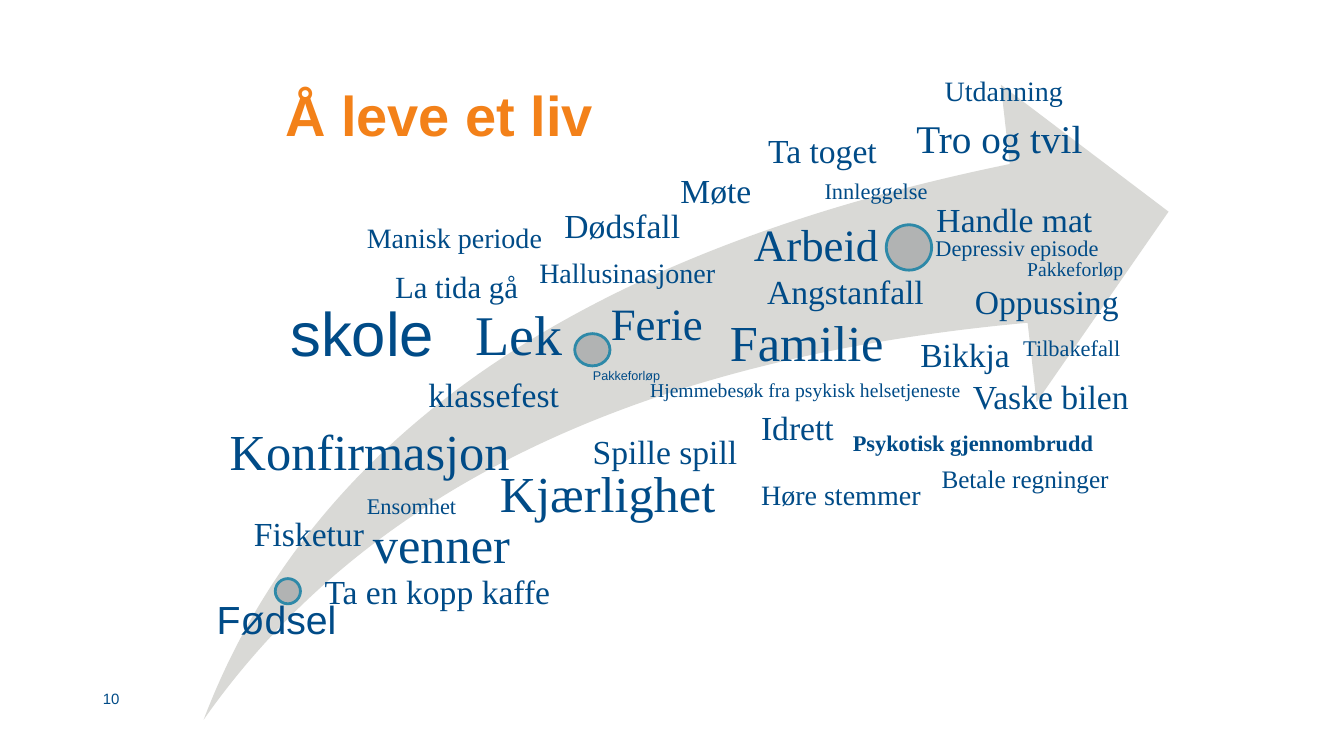
from pptx import Presentation
from pptx import util as u
from pptx.dml.color import RGBColor
from pptx.enum import shapes, text

BLUE, ORANGE = "004B87", "F38119"
SANS, SERIF = "Arial", "Times New Roman"

presentation = Presentation()
presentation.slide_width = u.Inches(13.33)
presentation.slide_height = u.Inches(7.5)
slide = presentation.slides.add_slide(presentation.slide_layouts[6])

# Square grid: 133.3 columns by 75 rows
CELL = presentation.slide_height / 75


def cells(*counts):
    """Turn counts of grid cells into slide lengths."""
    return [u.Emu(round(count * CELL)) for count in counts]


def write(words, box, size, font, color=BLUE, bold=False, insets=(1, 0.5, 1, 0.5),
          spacing=1.0, anchor=text.MSO_ANCHOR.TOP):
    """Add one line of text; box and insets are counted in grid cells."""
    frame = slide.shapes.add_textbox(*cells(*box)).text_frame
    frame.word_wrap = True
    frame.vertical_anchor = anchor
    (frame.margin_left, frame.margin_top,
     frame.margin_right, frame.margin_bottom) = cells(*insets)
    paragraph = frame.paragraphs[0]
    paragraph.line_spacing = spacing
    run = paragraph.add_run()
    run.text = words
    run.font.name = font
    run.font.size = u.Pt(size)
    run.font.bold = bold
    run.font.color.rgb = RGBColor.from_string(color)


write("10", (8.9, 67.7, 11.1, 3.3), 10.7, SANS, insets=(1.3, 0.7, 1.3, 0.7))
write("Å leve et liv", (27.3, 4.7, 78.3, 13.3), 40, SANS, ORANGE, bold=True,
      anchor=text.MSO_ANCHOR.MIDDLE)

# Life arrow, then the milestones along it
OVAL = shapes.MSO_SHAPE.OVAL
figures = [
    (shapes.MSO_SHAPE.SWOOSH_ARROW, (20.2, 8.4, 95.7, 63), "D9D9D6"),
    (OVAL, (27.3, 57.4, 2.5, 2.5), "B1B3B3"),
    (OVAL, (87.9, 22.3, 4.5, 4.5), "B1B3B3"),
    (OVAL, (57, 33.1, 3.5, 3.2), "B1B3B3"),
]
for kind, box, fill in figures:
    shape = slide.shapes.add_shape(kind, *cells(*box))
    shape.shadow.inherit = False
    shape.fill.solid()
    shape.fill.fore_color.rgb = RGBColor.from_string(fill)
    if kind == OVAL:
        shape.line.color.rgb = RGBColor.from_string("2E89A8")
        shape.line.width = u.Pt(2)
    else:
        shape.adjustments[0] = shape.adjustments[1] = 0.25
        shape.line.fill.background()

# Milestone labels: words, box, size, left inset
milestones = [
    ("Fødsel", (20.2, 59.6, 22.3, 4.7), 28, 1.3),
    ("Pakkeforløp", (56.4, 36.7, 9.5, 2.9), 9, 2.4),
    ("skole", (25.5, 30.1, 17.6, 7.3), 44, 3.3),
]
for words, box, size, inset in milestones:
    write(words, box, size, SANS, insets=(inset, 0, 0, 0), spacing=0.9)

# Word cloud by size: words, left, top, width
cloud = {
    40: [("Lek", 46.2, 29.2, 12.6)],
    36: [("Kjærlighet", 48.6, 45.4, 28.4), ("venner", 36, 50.4, 18.1),
         ("Konfirmasjon", 21.8, 41.2, 33.2), ("Familie", 71.4, 30.4, 22)],
    32: [("Ferie", 59.6, 28.8, 14.2), ("Arbeid", 73.8, 21, 17.3)],
    28: [("Tro og tvil", 89.9, 10.8, 21.7)],
    24: [("Idrett", 74.5, 39.9, 22.8), ("Bikkja", 90.3, 32.6, 13.4),
         ("Handle mat", 91.9, 19.2, 19.7), ("Dødsfall", 55, 19.8, 15),
         ("Ta toget", 75.2, 12.4, 17.3), ("Fisketur", 24.2, 50.4, 15.7),
         ("klassefest", 41.5, 36.6, 16.5), ("Oppussing", 95.7, 27.4, 17),
         ("Møte", 66.5, 16.4, 10.5), ("Vaske bilen", 95.5, 36.8, 18.9),
         ("Spille spill", 57.8, 42.3, 19.7), ("Ta en kopp kaffe", 31.2, 56.1, 29.9),
         ("Angstanfall", 75.1, 26.4, 17.6)],
    22: [("La tida gå", 38.2, 26.1, 15.6)],
    20: [("Høre stemmer", 74.5, 46.9, 26), ("Utdanning", 92.7, 6.8, 22),
         ("Manisk periode", 35.4, 21.4, 21.6), ("Hallusinasjoner", 52.5, 24.9, 20.8)],
    18: [("Betale regninger", 92.4, 45.5, 24.3)],
    16: [("Psykotisk gjennombrudd", 83.6, 42.1, 26.8), ("Depressiv episode", 91.8, 22.7, 19.7),
         ("Tilbakefall", 100.5, 32.7, 14.2), ("Innleggelse", 80.8, 17.1, 13.5),
         ("Ensomhet", 35.4, 48.3, 13.2)],
    14: [("Pakkeforløp", 100.9, 25, 15),
         ("Hjemmebesøk fra psykisk helsetjeneste", 63.5, 37, 32.8)],
}
for size, entries in cloud.items():
    height = size / 6 + 1  # one line plus the insets
    for words, left, top, width in entries:
        write(words, (left, top, width, height), size, SERIF,
              bold=words == "Psykotisk gjennombrudd")

presentation.save("out.pptx")
